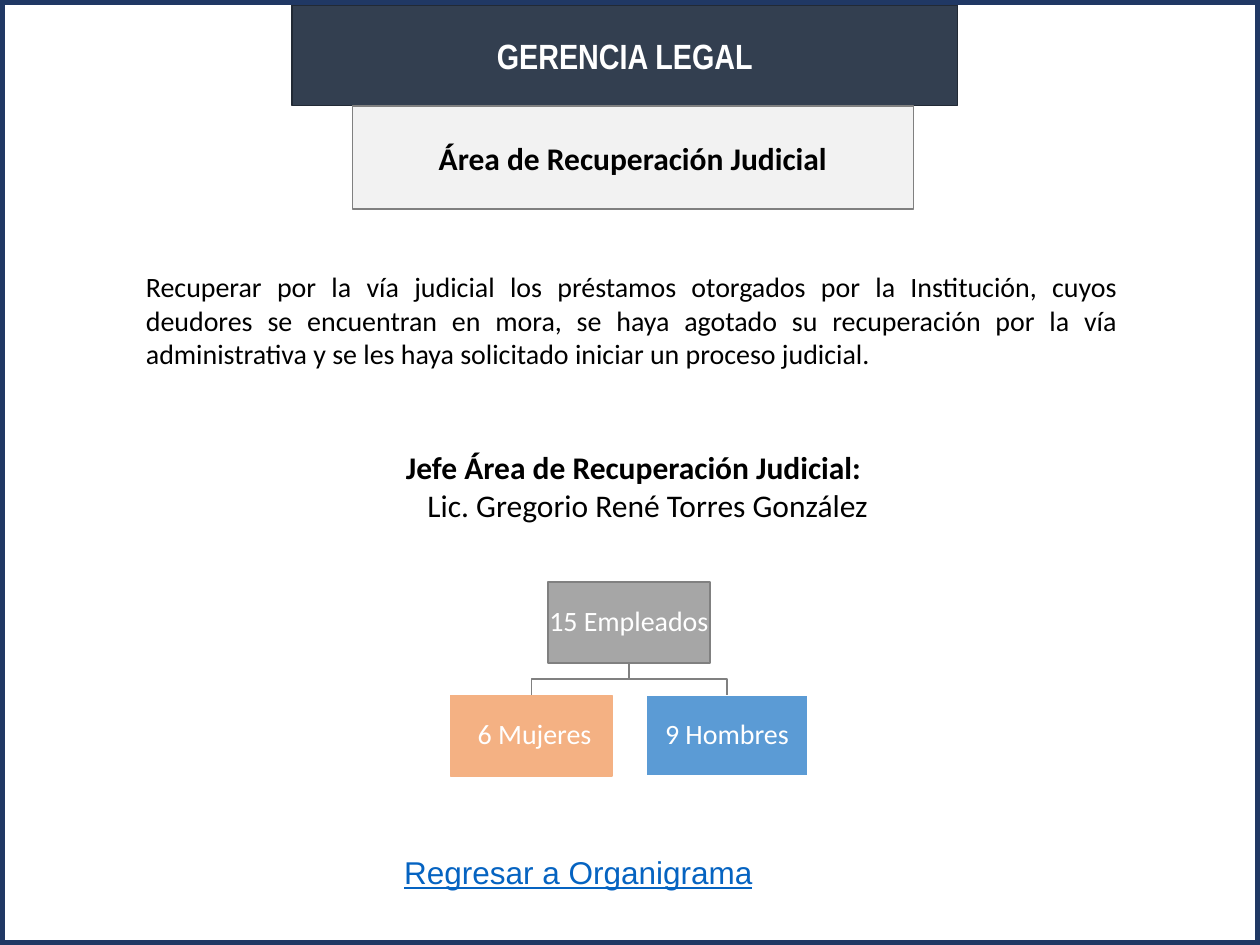
from dataclasses import dataclass
from typing import Any, Optional

import pptx
import pptx.dml.color
import pptx.enum.shapes
import pptx.enum.text
import pptx.util

Pt = pptx.util.Pt
RGBColor = pptx.dml.color.RGBColor
ALIGN = pptx.enum.text.PP_ALIGN
ANCHOR = pptx.enum.text.MSO_ANCHOR
RECTANGLE = pptx.enum.shapes.MSO_SHAPE.RECTANGLE

BLACK = RGBColor(0x00, 0x00, 0x00)
WHITE = RGBColor(0xFF, 0xFF, 0xFF)
NAVY = RGBColor(0x20, 0x38, 0x64)
SLATE = RGBColor(0x33, 0x3F, 0x50)
DARK_SLATE = RGBColor(0x22, 0x2A, 0x35)
PALE_GRAY = RGBColor(0xF2, 0xF2, 0xF2)
MID_GRAY = RGBColor(0xA6, 0xA6, 0xA6)
LINE_GRAY = RGBColor(0x80, 0x80, 0x80)
ORANGE = RGBColor(0xF4, 0xB1, 0x83)
BLUE = RGBColor(0x5B, 0x9B, 0xD5)
LINK_BLUE = RGBColor(0x05, 0x63, 0xC1)

NODE_WIDTH, NODE_HEIGHT = 92.4, 46.2
NODE_INSET = 0.72
CHILD_TOP = 397.4
FRAME_INSETS = dict.fromkeys(
    ("margin_left", "margin_right", "margin_top", "margin_bottom"), Pt(NODE_INSET)
)


@dataclass(frozen=True)
class Area:
    left: float
    top: float
    width: float
    height: float

    def lengths(self) -> tuple:
        return tuple(Pt(v) for v in (self.left, self.top, self.width, self.height))


@dataclass(frozen=True)
class Line:
    text: str
    size: float
    color: RGBColor = BLACK
    font: str = "Calibri"
    bold: bool = False
    underline: bool = False
    align: Any = ALIGN.CENTER
    indent: float = 0


@dataclass(frozen=True)
class Node:
    label: str
    left: float
    top: float
    fill: RGBColor
    outline: RGBColor
    indent: float = 0

    @property
    def center(self) -> float:
        return self.left + NODE_WIDTH / 2


def apply_format(target: Any, values: dict) -> None:
    for name, value in values.items():
        setattr(target, name, value)


def paint(shape: Any, fill: Optional[RGBColor], outline: RGBColor, weight: float = 1) -> None:
    if fill is None:
        shape.fill.background()
    else:
        shape.fill.solid()
        shape.fill.fore_color.rgb = fill
    shape.line.color.rgb = outline
    shape.line.width = Pt(weight)


def write(shape: Any, lines: list[Line], frame_format: dict, spacing: Optional[dict] = None) -> None:
    frame = shape.text_frame
    apply_format(frame, {"word_wrap": True, **frame_format})
    for index, line in enumerate(lines):
        paragraph = frame.add_paragraph() if index else frame.paragraphs[0]
        apply_format(paragraph, {"alignment": line.align, **(spacing or {})})
        if line.indent:
            paragraph._p.get_or_add_pPr().set("marL", str(Pt(line.indent)))
        run = paragraph.add_run()
        run.text = line.text
        apply_format(run.font, {
            "name": line.font,
            "size": Pt(line.size),
            "bold": line.bold,
            "underline": line.underline,
        })
        run.font.color.rgb = line.color


def add_panel(slide: Any, area: Area, fill: Optional[RGBColor],
              outline: RGBColor, weight: float = 1) -> Any:
    panel = slide.shapes.add_shape(RECTANGLE, *area.lengths())
    panel.shadow.inherit = False
    paint(panel, fill, outline, weight)
    return panel


def add_text(slide: Any, area: Area, lines: list[Line], **frame_format: Any) -> None:
    write(slide.shapes.add_textbox(*area.lengths()), lines, frame_format)


def add_branch(slide: Any, parent: Node, child: Node) -> None:
    start = parent.top + NODE_HEIGHT
    middle = (start + child.top) / 2
    corners = [(parent.center, middle), (child.center, middle), (child.center, child.top)]
    builder = slide.shapes.build_freeform(Pt(parent.center), Pt(start))
    builder.add_line_segments([(Pt(x), Pt(y)) for x, y in corners], close=False)
    branch = builder.convert_to_shape()
    branch.shadow.inherit = False
    paint(branch, None, LINE_GRAY)


def add_node(slide: Any, node: Node) -> None:
    area = Area(node.left, node.top, NODE_WIDTH, NODE_HEIGHT)
    write(
        add_panel(slide, area, node.fill, node.outline),
        [Line(node.label, 16, WHITE, indent=node.indent)],
        {"vertical_anchor": ANCHOR.MIDDLE, **FRAME_INSETS},
        {"line_spacing": 0.9},
    )


def main() -> None:
    deck = pptx.Presentation()
    apply_format(deck, {"slide_width": Pt(720), "slide_height": Pt(540)})
    slide = deck.slides.add_slide(deck.slide_layouts[5])

    add_panel(slide, Area(0, 0, 720, 540), None, NAVY, 6)

    add_text(slide, Area(223.9, 483.8, 235.4, 29), [
        Line("Regresar a Organigrama", 18, LINK_BLUE, "Arial", underline=True, align=ALIGN.LEFT),
    ])

    management = slide.shapes.title
    header = Area(167, 2.9, 380.2, 57.4)
    apply_format(management, dict(zip(("left", "top", "width", "height"), header.lengths())))
    paint(management, SLATE, DARK_SLATE)
    write(management, [Line("GERENCIA LEGAL", 20, WHITE, "Arial Narrow", bold=True)],
          {"vertical_anchor": ANCHOR.MIDDLE})

    add_text(slide, Area(195.8, 252.7, 354.2, 51), [
        Line("Jefe Área de Recuperación Judicial:", 18, bold=True),
        Line("Lic. Gregorio René Torres González", 18, indent=16),
    ], margin_right=Pt(28.6))

    department = add_panel(slide, Area(201.4, 60.5, 320.6, 59.2), PALE_GRAY, LINE_GRAY)
    write(department, [Line("Área de Recuperación Judicial", 18, bold=True)],
          {"vertical_anchor": ANCHOR.MIDDLE})

    employees = Node("15 Empleados", 313.2, 332.6, MID_GRAY, LINE_GRAY)
    genders = [
        Node("6 Mujeres", 257.5, CHILD_TOP, ORANGE, ORANGE, indent=3.6),
        Node("9 Hombres", 369.2, CHILD_TOP, BLUE, WHITE),
    ]
    for gender in genders:
        add_branch(slide, employees, gender)
    for node in [employees, *genders]:
        add_node(slide, node)

    add_text(slide, Area(76.3, 150.5, 569.5, 65.5), [
        Line(
            "Recuperar por la vía judicial los préstamos otorgados por la Institución, "
            "cuyos deudores se encuentran en mora, se haya agotado su recuperación por la "
            "vía administrativa y se les haya solicitado iniciar un proceso judicial.",
            16, align=ALIGN.JUSTIFY,
        ),
    ])

    deck.save("out.pptx")


if __name__ == "__main__":
    main()
